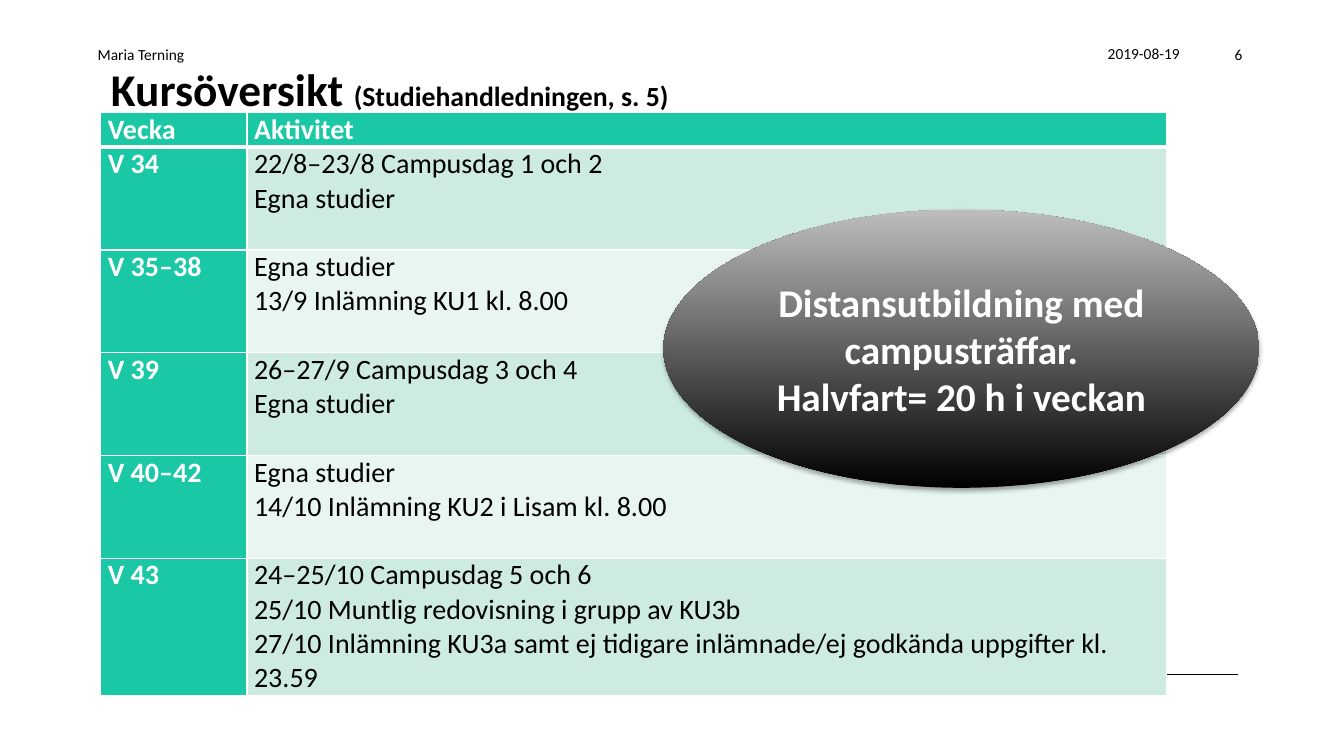
"""Build the course overview slide with its week table and callout ellipse."""
import pptx
import pptx.util
import pptx.dml.color
import pptx.enum.shapes
import pptx.enum.text
import pptx.oxml
import pptx.oxml.ns
from pptx.util import Inches

COLORS = {"text": "000000", "white": "FFFFFF", "accent": "1BC8A6",
          "band_dark": "CDEBE1", "band_light": "E8F5F1", "gray": "BDBDBD"}
FONT = "Calibri"
TITLE = [("Kursöversikt ", 32.4), ("(Studiehandledningen, s. 5)", 19.8)]
ALIGN = pptx.enum.text.PP_ALIGN
ANCHOR = pptx.enum.text.MSO_ANCHOR
HEADER_LABELS = [
    ("2019-08-19", (9.71, 0.39, 2.09, 0.29), ALIGN.RIGHT, ANCHOR.TOP),
    ("6", (11.61, 0.4, 0.81, 0.29), ALIGN.RIGHT, ANCHOR.TOP),
    ("Maria Terning", (0.87, 0.39, 8.51, 0.29), ALIGN.LEFT, ANCHOR.BOTTOM),
]
SCHEDULE = [
    ("Vecka", ["Aktivitet"], 1),
    ("V 34", ["22/8–23/8 Campusdag 1 och 2", "Egna studier"], 3),
    ("V 35–38", ["Egna studier", "13/9 Inlämning KU1 kl. 8.00"], 3),
    ("V 39", ["26–27/9 Campusdag 3 och 4", "Egna studier"], 3),
    ("V 40–42", ["Egna studier", "14/10 Inlämning KU2 i Lisam kl. 8.00"], 3),
    ("V 43", ["24–25/10 Campusdag 5 och 6",
              "25/10 Muntlig redovisning i grupp av KU3b",
              "27/10 Inlämning KU3a samt ej tidigare inlämnade/ej godkända uppgifter kl. 23.59"], 4),
]
COLUMN_WIDTHS = [1.45, 9.12]
LINE_HEIGHT = 0.34
CALLOUT = ["Distansutbildning med campusträffar.", "Halvfart= 20 h i veckan"]


def rgb(name):
    return pptx.dml.color.RGBColor.from_string(COLORS[name])


def add_span(para, text, size, color="text", bold=False):
    span = para.add_run()
    span.text = text
    span.font.name = FONT
    span.font.size = pptx.util.Pt(size)
    span.font.bold = bold
    span.font.color.rgb = rgb(color)


def write_lines(frame, lines, size, color="text", bold=False, align=ALIGN.LEFT):
    for index, line in enumerate(lines):
        para = frame.add_paragraph() if index else frame.paragraphs[0]
        para.alignment = align
        add_span(para, line, size, color, bold)


def add_borders(cell, row):
    widths = {"lnL": 1, "lnR": 1, "lnT": 3 if row == 1 else 1, "lnB": 3 if row == 0 else 1}
    for index, (side, width) in enumerate(widths.items()):
        border = pptx.oxml.parse_xml(
            f'<a:{side} {pptx.oxml.ns.nsdecls("a")} w="{pptx.util.Pt(width)}"><a:solidFill>'
            f'<a:srgbClr val="{COLORS["white"]}"/></a:solidFill></a:{side}>')
        cell._tc.get_or_add_tcPr().insert(index, border)


def add_rule(page):
    rule = page.shapes.add_connector(pptx.enum.shapes.MSO_CONNECTOR.STRAIGHT,
                                     Inches(0.99), Inches(6.69), Inches(12.28), Inches(6.69))
    rule.line.color.rgb = rgb("text")
    rule.line.width = pptx.util.Pt(0.75)
    rule._element.spPr.append(pptx.oxml.parse_xml(f'<a:effectLst {pptx.oxml.ns.nsdecls("a")}/>'))


def add_title(page):
    title = page.shapes.title
    title.left, title.top, title.width, title.height = map(Inches, (1, 0.54, 11.28, 0.68))
    title.text_frame.vertical_anchor = ANCHOR.MIDDLE
    para = title.text_frame.paragraphs[0]
    para.alignment = ALIGN.LEFT
    for text, size in TITLE:
        add_span(para, text, size, bold=True)


def add_header_labels(page):
    for text, place, align, anchor in HEADER_LABELS:
        box = page.shapes.add_textbox(*map(Inches, place))
        box.text_frame.word_wrap = True
        box.text_frame.vertical_anchor = anchor
        write_lines(box.text_frame, [text], 11, align=align)


def add_schedule(page):
    heights = [LINE_HEIGHT * count for _, _, count in SCHEDULE]
    table = page.shapes.add_table(len(SCHEDULE), len(COLUMN_WIDTHS), Inches(1), Inches(1.12),
                                  Inches(sum(COLUMN_WIDTHS)), Inches(sum(heights))).table
    for column, width in zip(table.columns, COLUMN_WIDTHS):
        column.width = Inches(width)
    for row, (week, activities, _) in enumerate(SCHEDULE):
        table.rows[row].height = Inches(heights[row])
        for column, lines in enumerate([[week], activities]):
            cell = table.cell(row, column)
            heading = row == 0 or column == 0
            band = "band_dark" if row % 2 else "band_light"
            cell.margin_left = cell.margin_right = Inches(0.07)
            cell.margin_top = cell.margin_bottom = 0
            cell.fill.solid()
            cell.fill.fore_color.rgb = rgb("accent" if heading else band)
            add_borders(cell, row)
            write_lines(cell.text_frame, lines, 20, "white" if heading else "text", heading)


def add_callout(page):
    ellipse = page.shapes.add_shape(pptx.enum.shapes.MSO_SHAPE.OVAL,
                                    *map(Inches, (6.58, 2.08, 5.91, 2.76)))
    ellipse.fill.gradient()
    ellipse.fill.gradient_angle = 90
    for stop, color in zip(ellipse.fill.gradient_stops, ("text", "gray")):
        stop.color.rgb = rgb(color)
    ellipse.line.fill.background()
    ellipse.shadow.inherit = False
    effects = ellipse._element.spPr.find(pptx.oxml.ns.qn("a:effectLst"))
    effects.append(pptx.oxml.parse_xml(
        f'<a:outerShdw {pptx.oxml.ns.nsdecls("a")} blurRad="{pptx.util.Pt(3.1)}" '
        f'dist="{pptx.util.Pt(1.8)}" dir="5400000" rotWithShape="0">'
        f'<a:srgbClr val="{COLORS["text"]}"><a:alpha val="35000"/></a:srgbClr></a:outerShdw>'))
    ellipse.text_frame.word_wrap = True
    ellipse.text_frame.vertical_anchor = ANCHOR.MIDDLE
    write_lines(ellipse.text_frame, CALLOUT, 28, "white", True, ALIGN.CENTER)


def main():
    deck = pptx.Presentation()
    deck.slide_width, deck.slide_height = Inches(13.33), Inches(7.5)
    page = deck.slides.add_slide(deck.slide_layouts[5])
    add_rule(page)
    add_title(page)
    add_header_labels(page)
    add_schedule(page)
    add_callout(page)
    deck.save("out.pptx")


if __name__ == "__main__":
    main()
